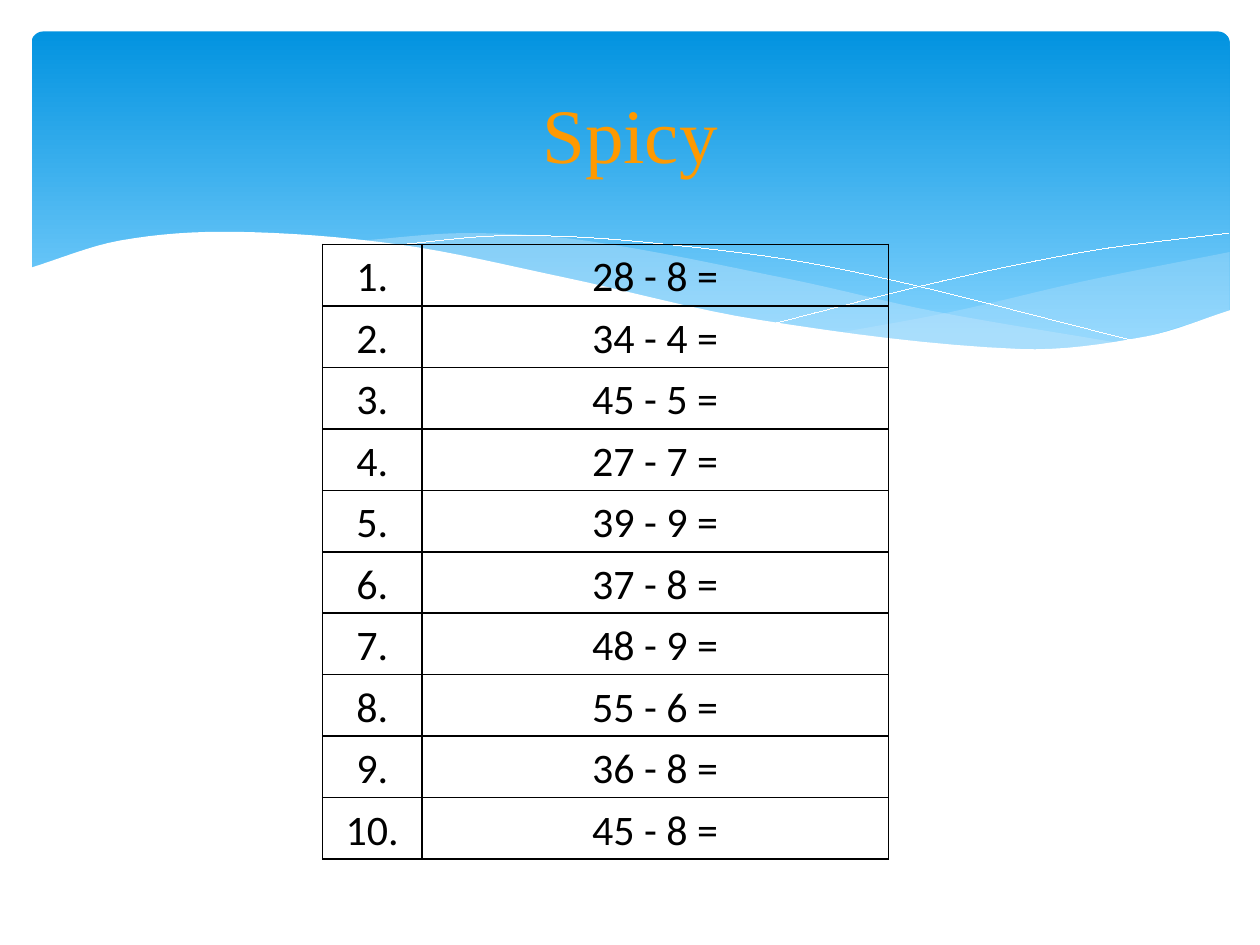
from lxml import etree
from pptx import Presentation
from pptx.dml.color import RGBColor
from pptx.enum.shapes import MSO_SHAPE
from pptx.enum.text import MSO_ANCHOR, PP_ALIGN
from pptx.oxml.ns import qn
from pptx.util import Inches, Pt

ROUND = MSO_SHAPE.ROUNDED_RECTANGLE
MIDDLE = MSO_ANCHOR.MIDDLE
CENTER = PP_ALIGN.CENTER

TITLE = "Spicy"
SUMS = ["28 - 8 =", "34 - 4 =", "45 - 5 =", "27 - 7 =", "39 - 9 =",
        "37 - 8 =", "48 - 9 =", "55 - 6 =", "36 - 8 =", "45 - 8 ="]
COLS = [0.79, 3.7]
ROW = 0.488

WHITE, BLACK, MIST, ORANGE = "FFFFFF", "000000", "C6E7FC", "FF9900"
SKY = [(0, "0293E0"), (0.9, "83D3FE")]
STEPS = 8
HAIR = 0.01

BANDS = [
    {"top": [(6.61, 2.65), (7.53, 2.48), (8.61, 2.23), (9.76, 2)],
     "base": [(6.61, 2.65), (7.45, 2.75), (8.14, 2.78), (8.89, 2.72),
              (9.76, 2.47)],
     "color": MIST, "alpha": 29},
    {"top": [(2.86, 1.91), (3.7, 1.85), (4.65, 1.91), (6.29, 2.22),
             (7.41, 2.47), (8.93, 2.73)],
     "base": [(2.86, 1.91), (4.49, 2.22), (5.66, 2.48), (6.8, 2.68),
              (8.07, 2.78), (8.93, 2.73)],
     "color": MIST, "alpha": 40}]
LINES = [
    [(3.09, 1.95), (4.01, 1.87), (5.1, 1.92), (6.65, 2.13), (9.07, 2.72)],
    [(6.13, 2.57), (7.48, 2.23), (8.66, 1.99), (9.75, 1.85)]]
FRONT = {
    "top": [(0.23, 2.13), (0.95, 1.91), (1.85, 1.84), (3.16, 1.94),
            (4.47, 2.2), (6.03, 2.54), (8.09, 2.77), (9.1, 2.67),
            (9.77, 2.46)],
    "base": [(0.23, 3.29), (9.77, 3.29)],
    "color": WHITE, "alpha": 100}


def paint(color, code):
    color.rgb = RGBColor.from_string(code)


def write(frame, text, size, font, color, lead=None):
    par = frame.paragraphs[0]
    par.alignment = CENTER
    par.line_spacing = lead
    run = par.add_run()
    run.text = text
    run.font.size = Pt(size)
    run.font.name = font
    paint(run.font.color, color)


def slope(start, end):
    return (end[1] - start[1]) / (end[0] - start[0])


def curve(knots):
    last = len(knots) - 1
    tilts = [slope(knots[max(i - 1, 0)], knots[min(i + 1, last)])
             for i in range(last + 1)]
    points = [knots[0]]
    for i in range(last):
        (x0, y0), (x1, y1) = knots[i:i + 2]
        third = (x1 - x0) / 3
        pull0, pull1 = y0 + tilts[i] * third, y1 - tilts[i + 1] * third
        for step in range(1, STEPS + 1):
            t = step / STEPS
            s = 1 - t
            y = (s ** 3 * y0 + 3 * s * s * t * pull0
                 + 3 * s * t * t * pull1 + t ** 3 * y1)
            points.append((x0 + t * (x1 - x0), y))
    return points


def draw(shapes, points, close):
    spots = [(Inches(x), Inches(y)) for x, y in points]
    pen = shapes.build_freeform(*spots[0], scale=1.0)
    pen.add_line_segments(spots[1:], close=close)
    shape = pen.convert_to_shape()
    shape.shadow.inherit = False
    return shape


def add_band(shapes, top, base, color, alpha):
    band = draw(shapes, curve(top) + curve(base)[::-1], close=True)
    band.line.fill.background()
    band.fill.solid()
    paint(band.fill.fore_color, color)
    tint = band.element.spPr.find(".//" + qn("a:srgbClr"))
    etree.SubElement(tint, qn("a:alpha"), val=str(alpha * 1000))


def add_line(shapes, knots):
    line = draw(shapes, curve(knots), close=False)
    line.fill.background()
    paint(line.line.color, WHITE)
    line.line.width = Pt(HAIR)


def add_sky(shapes):
    sky = shapes.add_shape(ROUND, Inches(0.25), Inches(0.25),
                           Inches(9.51), Inches(2.7))
    sky.adjustments[0] = 0.034
    sky.shadow.inherit = False
    sky.line.fill.background()
    sky.fill.gradient()
    sky.fill.gradient_angle = 270
    for stop, (place, code) in zip(sky.fill.gradient_stops, SKY):
        stop.position = place
        paint(stop.color, code)


def edge(cell, color, width):
    props = cell._tc.get_or_add_tcPr()
    for side in ("lnL", "lnR", "lnT", "lnB"):
        line = etree.SubElement(props, qn("a:" + side), w=str(Pt(width)))
        fill = etree.SubElement(line, qn("a:solidFill"))
        etree.SubElement(fill, qn("a:srgbClr"), val=color)


def add_sums(shapes):
    grid = shapes.add_table(
        len(SUMS), len(COLS), Inches(2.56), Inches(1.94),
        Inches(sum(COLS)), Inches(ROW * len(SUMS))).table
    grid.first_row = grid.horz_banding = False
    for col, width in zip(grid.columns, COLS):
        col.width = Inches(width)
    for i, task in enumerate(SUMS):
        grid.rows[i].height = Inches(ROW)
        for j, text in enumerate((f"{i + 1}.", task)):
            cell = grid.cell(i, j)
            cell.margin_left = cell.margin_right = Inches(0.07)
            cell.margin_top = cell.margin_bottom = 0
            edge(cell, BLACK, 1)
            cell.fill.background()
            write(cell.text_frame, text, size=24, font="Calibri",
                  color=BLACK, lead=1.15)


def set_title(title):
    title.left, title.top = Inches(0.5), Inches(0.37)
    title.width, title.height = Inches(9), Inches(1.37)
    title.text_frame.vertical_anchor = MIDDLE
    write(title.text_frame, TITLE, size=44, font="Times New Roman",
          color=ORANGE)
    title.element.getparent().append(title.element)


def main():
    deck = Presentation()
    deck.slide_width, deck.slide_height = Inches(10), Inches(7.5)
    shapes = deck.slides.add_slide(deck.slide_layouts[5]).shapes

    add_sky(shapes)
    for band in BANDS:
        add_band(shapes, **band)
    for knots in LINES:
        add_line(shapes, knots)
    add_band(shapes, **FRONT)
    add_sums(shapes)
    set_title(shapes.title)

    deck.save("out.pptx")


if __name__ == "__main__":
    main()
